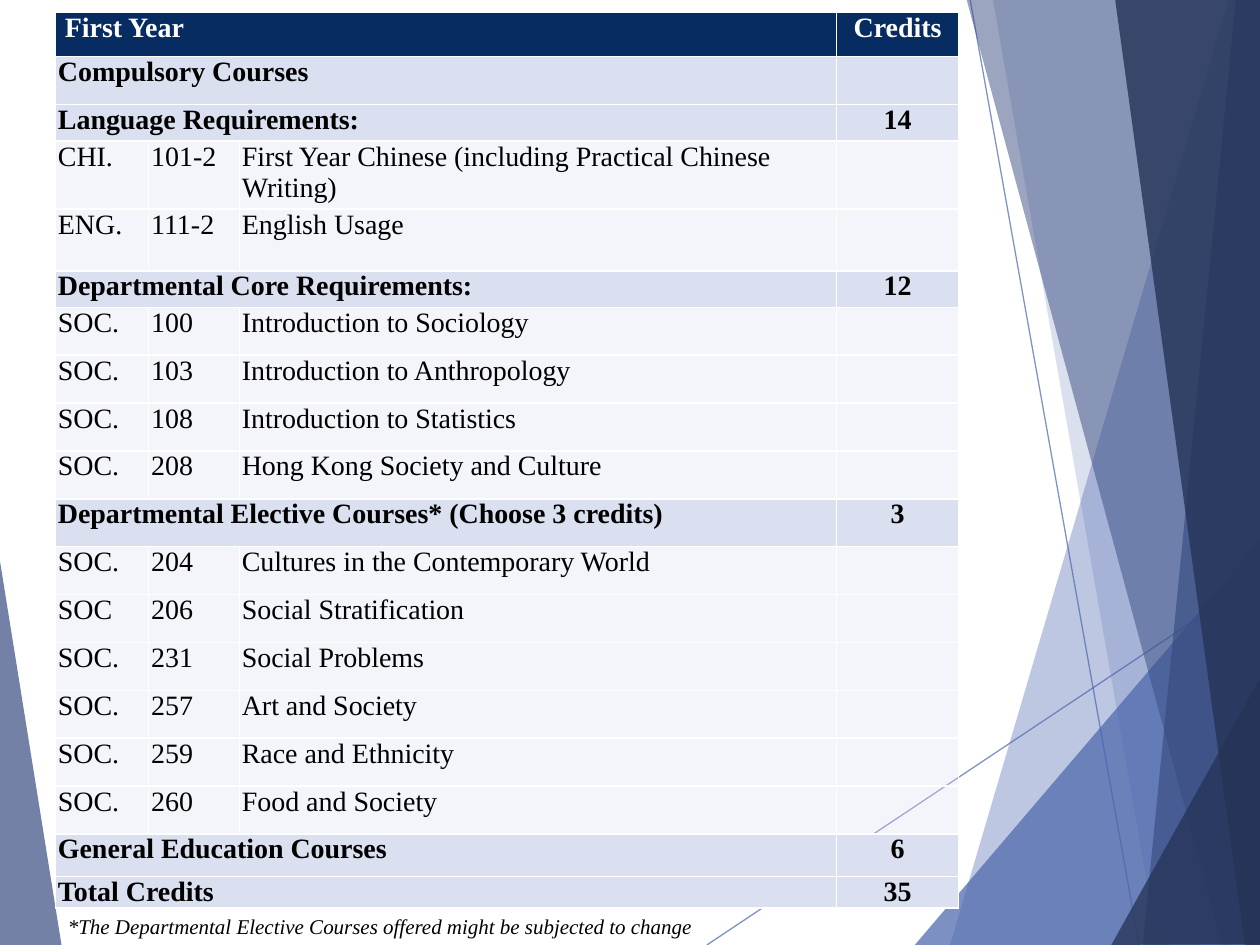
from dataclasses import dataclass

from lxml.etree import SubElement
from pptx import Presentation
from pptx.dml.color import RGBColor
from pptx.enum.shapes import MSO_CONNECTOR
from pptx.enum.text import PP_ALIGN
from pptx.oxml.ns import qn
from pptx.util import Inches, Pt


@dataclass(frozen=True)
class Theme:
    font: str = "Times New Roman"
    table_size: int = 16
    note_size: int = 12
    text: str = "000000"
    white: str = "FFFFFF"
    header: str = "072C62"
    band: str = "DAE0EF"
    blue: str = "4A66AC"
    dark_blue: str = "384C81"
    navy: str = "253356"


THEME = Theme()

# Background: straight rays, then translucent panels (corners, colour, opacity)
RAYS = [((5.61, 7.5), (10.01, 4.57)), ((7.7, 0), (9.04, 7.5))]
PANELS = [
    ([(9.75, 0), (7.54, 7.5), (10.02, 7.51), (10.01, 0.01)], THEME.blue, 36),
    ([(7.88, -0.01), (9.19, 7.5), (10.01, 7.5), (10.01, -0.01)], THEME.blue, 20),
    ([(7.26, 7.5), (10, 4.29), (10.01, 7.5)], THEME.blue, 72),
    ([(7.67, -0.01), (9.7, 7.5), (10.01, 7.49), (10.01, -0.01)], THEME.dark_blue, 50),
    ([(9.81, -0.01), (9.07, 7.5), (10.01, 7.5), (10, -0.01)], THEME.dark_blue, 66),
    ([(8.85, -0.01), (9.88, 7.5), (10.02, 7.5), (10, -0.01)], THEME.navy, 80),
    ([(8.82, 7.5), (10.02, 5.35), (10.02, 7.49)], THEME.navy, 76),
    ([(-0.01, 4.39), (0.49, 7.51), (-0.01, 7.5)], THEME.dark_blue, 70),
]

# Table rows: a heading is (title, credits), a course is (subject, code, name)
COLUMN_WIDTHS = [0.74, 0.72, 4.74, 0.97]
ROW_HEIGHT = 0.38
SPECIAL_HEIGHTS = {0: 0.35, 2: 0.29, 3: 0.54, 4: 0.49, 5: 0.29, 17: 0.34, 18: 0.25}
ROWS = [
    (" First Year", "Credits"),
    ("Compulsory Courses", ""),
    ("Language Requirements:", "14"),
    ("CHI.", "101-2", "First Year Chinese (including Practical Chinese Writing)"),
    ("ENG.", "111-2", "English Usage"),
    ("Departmental Core Requirements:", "12"),
    ("SOC.", "100", "Introduction to Sociology"),
    ("SOC.", "103", "Introduction to Anthropology"),
    ("SOC.", "108", "Introduction to Statistics"),
    ("SOC.", "208", "Hong Kong Society and Culture"),
    ("Departmental Elective Courses* (Choose 3 credits)", "3"),
    ("SOC.", "204", "Cultures in the Contemporary World"),
    ("SOC", "206", "Social Stratification"),
    ("SOC.", "231", "Social Problems"),
    ("SOC.", "257", "Art and Society"),
    ("SOC.", "259", "Race and Ethnicity"),
    ("SOC.", "260", "Food and Society"),
    ("General Education Courses", "6"),
    ("Total Credits", "35"),
]
NOTE = "*The Departmental Elective Courses offered might be subjected to change"


def paint(fill, color, opacity=100):
    fill.solid()
    fill.fore_color.rgb = RGBColor.from_string(color)
    if opacity < 100:
        set_opacity(fill._xPr, opacity)


def set_opacity(parent, opacity):
    color = next(parent.iter(qn("a:srgbClr")))
    SubElement(color, qn("a:alpha")).set("val", str(opacity * 1000))


def add_span(para, text, size, color, bold=False, italic=False):
    span = para.add_run()
    span.text = text
    font = span.font
    font.name, font.size = THEME.font, Pt(size)
    font.bold, font.italic = bold, italic
    font.color.rgb = RGBColor.from_string(color)


def add_ray(group, start, end):
    ray = group.shapes.add_connector(
        MSO_CONNECTOR.STRAIGHT, *(Inches(value) for value in start + end))
    ray.line.width = Pt(0.75)
    paint(ray.line.fill, THEME.blue)
    properties = ray._element.spPr
    set_opacity(properties, 70)
    SubElement(properties, qn("a:effectLst"))


def add_panel(group, corners, color, opacity):
    points = [(Inches(x), Inches(y)) for x, y in corners]
    builder = group.shapes.build_freeform(*points[0])
    builder.add_line_segments(points[1:], close=True)
    panel = builder.convert_to_shape()
    panel.shadow.inherit = False
    panel.line.fill.background()
    paint(panel.fill, color, opacity)


def add_borders(cell):
    properties = cell._tc.get_or_add_tcPr()
    for position, side in enumerate(("lnL", "lnR", "lnT", "lnB")):
        line = properties.makeelement(qn(f"a:{side}"), {"w": str(Pt(1))})
        fill = SubElement(line, qn("a:solidFill"))
        SubElement(fill, qn("a:srgbClr")).set("val", THEME.white)
        properties.insert(position, line)


def format_cell(cell, fill, opacity):
    cell.margin_left = cell.margin_right = Inches(0.02)
    cell.margin_top = cell.margin_bottom = 0
    paint(cell.fill, fill, opacity)
    add_borders(cell)


def add_course_table(page):
    heights = [SPECIAL_HEIGHTS.get(index, ROW_HEIGHT) for index in range(len(ROWS))]
    table = page.shapes.add_table(
        len(ROWS), len(COLUMN_WIDTHS), Inches(0.44), Inches(0.1),
        Inches(sum(COLUMN_WIDTHS)), Inches(sum(heights))).table
    for column, width in zip(table.columns, COLUMN_WIDTHS):
        column.width = Inches(width)

    for index, (texts, height) in enumerate(zip(ROWS, heights)):
        table.rows[index].height = Inches(height)
        is_heading = len(texts) == 2
        fill = THEME.band if index else THEME.header
        color = THEME.text if index else THEME.white
        for column in range(len(COLUMN_WIDTHS)):
            format_cell(table.cell(index, column), fill, 100 if is_heading else 30)
        if is_heading:
            table.cell(index, 0).merge(table.cell(index, 2))
        for column, text in zip((0, 3) if is_heading else (0, 1, 2), texts):
            if text:
                para = table.cell(index, column).text_frame.paragraphs[0]
                para.alignment = PP_ALIGN.CENTER if column == 3 else PP_ALIGN.LEFT
                add_span(para, text, THEME.table_size, color, bold=is_heading)


def add_note(page):
    box = page.shapes.add_textbox(Inches(0.44), Inches(7.2), Inches(5.93), Inches(0.3))
    box.text_frame.word_wrap = True
    add_span(box.text_frame.paragraphs[0], NOTE, THEME.note_size, THEME.text, italic=True)


def main():
    deck = Presentation()
    deck.slide_width, deck.slide_height = Inches(10), Inches(7.5)
    page = deck.slides.add_slide(deck.slide_layouts[6])
    paint(page.background.fill, THEME.white)

    # Background decoration
    backdrop = page.shapes.add_group_shape()
    for start, end in RAYS:
        add_ray(backdrop, start, end)
    for corners, color, opacity in PANELS:
        add_panel(backdrop, corners, color, opacity)

    # Content
    add_course_table(page)
    add_note(page)
    deck.save("out.pptx")


if __name__ == "__main__":
    main()
